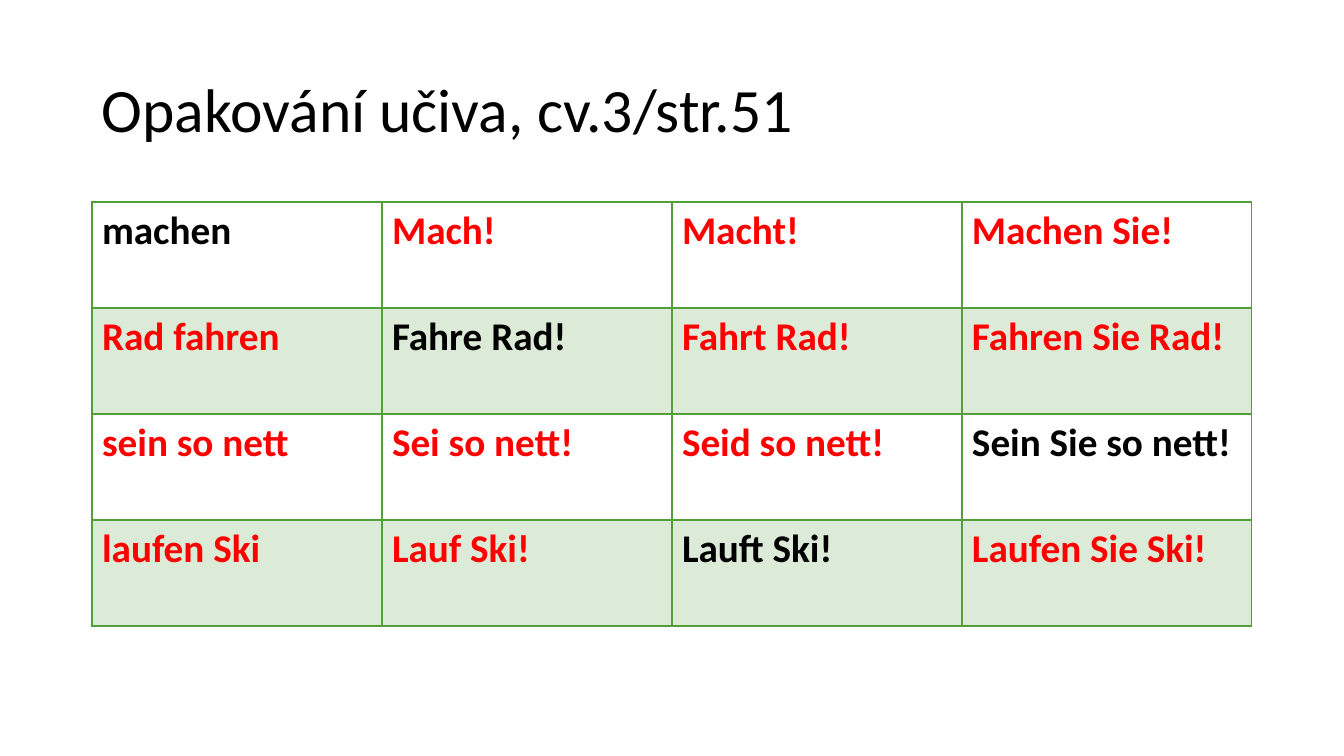
from dataclasses import dataclass

from lxml import etree
from pptx import Presentation
from pptx.dml.color import RGBColor
from pptx.enum.text import MSO_ANCHOR
from pptx.oxml.ns import qn
from pptx.slide import Slide
from pptx.table import _Cell
from pptx.text.text import _Paragraph
from pptx.util import Emu, Pt

MIDDLE = MSO_ANCHOR.MIDDLE

EMU_PER_PX = 914400 / 100.8
FONT = "Calibri"
COLORS = {"given": "000000", "answer": "FF0000", "green": "549E39"}
BAND_OPACITY = 20

SLIDE_W, SLIDE_H = 1344, 756
LEFT = 92
TITLE_TOP, TITLE_W, TITLE_H = 40, 1160, 146
TABLE_TOP, COLUMN_W, ROW_H = 202, 290, 106


@dataclass(frozen=True)
class VerbRow:
    """Infinitive and its imperatives; `given` is the form already supplied."""
    forms: tuple[str, str, str, str]
    given: int


VERBS = [
    VerbRow(("machen", "Mach!", "Macht!", "Machen Sie!"), 0),
    VerbRow(("Rad fahren", "Fahre Rad!", "Fahrt Rad!", "Fahren Sie Rad!"), 1),
    VerbRow(("sein so nett", "Sei so nett!", "Seid so nett!", "Sein Sie so nett!"), 3),
    VerbRow(("laufen Ski", "Lauf Ski!", "Lauft Ski!", "Laufen Sie Ski!"), 2),
]


def px(length: int) -> Emu:
    return Emu(round(length * EMU_PER_PX))


def add_run(paragraph: _Paragraph, text: str, size: int, color: str, bold: bool = False) -> None:
    run = paragraph.add_run()
    run.text = text
    run.font.name = FONT
    run.font.size = Pt(size)
    run.font.bold = bold
    run.font.color.rgb = RGBColor.from_string(COLORS[color])


def set_borders(cell: _Cell, bottom_pt: int) -> None:
    properties = cell._tc.get_or_add_tcPr()
    for side, width in (("L", 1), ("R", 1), ("T", 1), ("B", bottom_pt)):
        line = etree.SubElement(properties, qn(f"a:ln{side}"), w=str(Pt(width)))
        fill = etree.SubElement(line, qn("a:solidFill"))
        etree.SubElement(fill, qn("a:srgbClr"), val=COLORS["green"])


def set_band(cell: _Cell, shaded: bool) -> None:
    if not shaded:
        cell.fill.background()
        return
    cell.fill.solid()
    cell.fill.fore_color.rgb = RGBColor.from_string(COLORS["green"])
    color = cell._tc.tcPr.find(qn("a:solidFill")).find(qn("a:srgbClr"))
    etree.SubElement(color, qn("a:alpha"), val=str(BAND_OPACITY * 1000))


def add_title(slide: Slide, text: str) -> None:
    box = slide.shapes.add_textbox(px(LEFT), px(TITLE_TOP), px(TITLE_W), px(TITLE_H))
    frame = box.text_frame
    frame.word_wrap = True
    frame.vertical_anchor = MIDDLE
    heading = frame.paragraphs[0]
    heading.line_spacing = 0.9
    add_run(heading, text, 44, "given")


def add_verb_table(slide: Slide, verbs: list[VerbRow]) -> None:
    columns = len(verbs[0].forms)
    table = slide.shapes.add_table(
        len(verbs), columns, px(LEFT), px(TABLE_TOP),
        px(columns * COLUMN_W), px(len(verbs) * ROW_H),
    ).table
    table.first_row = True
    table.horz_banding = True
    for column in table.columns:
        column.width = px(COLUMN_W)
    for row_index, verb in enumerate(verbs):
        table.rows[row_index].height = px(ROW_H)
        for form_index, form in enumerate(verb.forms):
            cell = table.cell(row_index, form_index)
            set_borders(cell, bottom_pt=2 if row_index == 0 else 1)
            set_band(cell, shaded=row_index % 2 == 1)
            color = "given" if form_index == verb.given else "answer"
            add_run(cell.text_frame.paragraphs[0], form, 28, color, bold=True)


def main() -> None:
    deck = Presentation()
    deck.slide_width, deck.slide_height = px(SLIDE_W), px(SLIDE_H)
    slide = deck.slides.add_slide(deck.slide_layouts[6])

    # Heading
    add_title(slide, "Opakování učiva, cv.3/str.51")

    # Imperative forms
    add_verb_table(slide, VERBS)

    deck.save("out.pptx")


if __name__ == "__main__":
    main()
